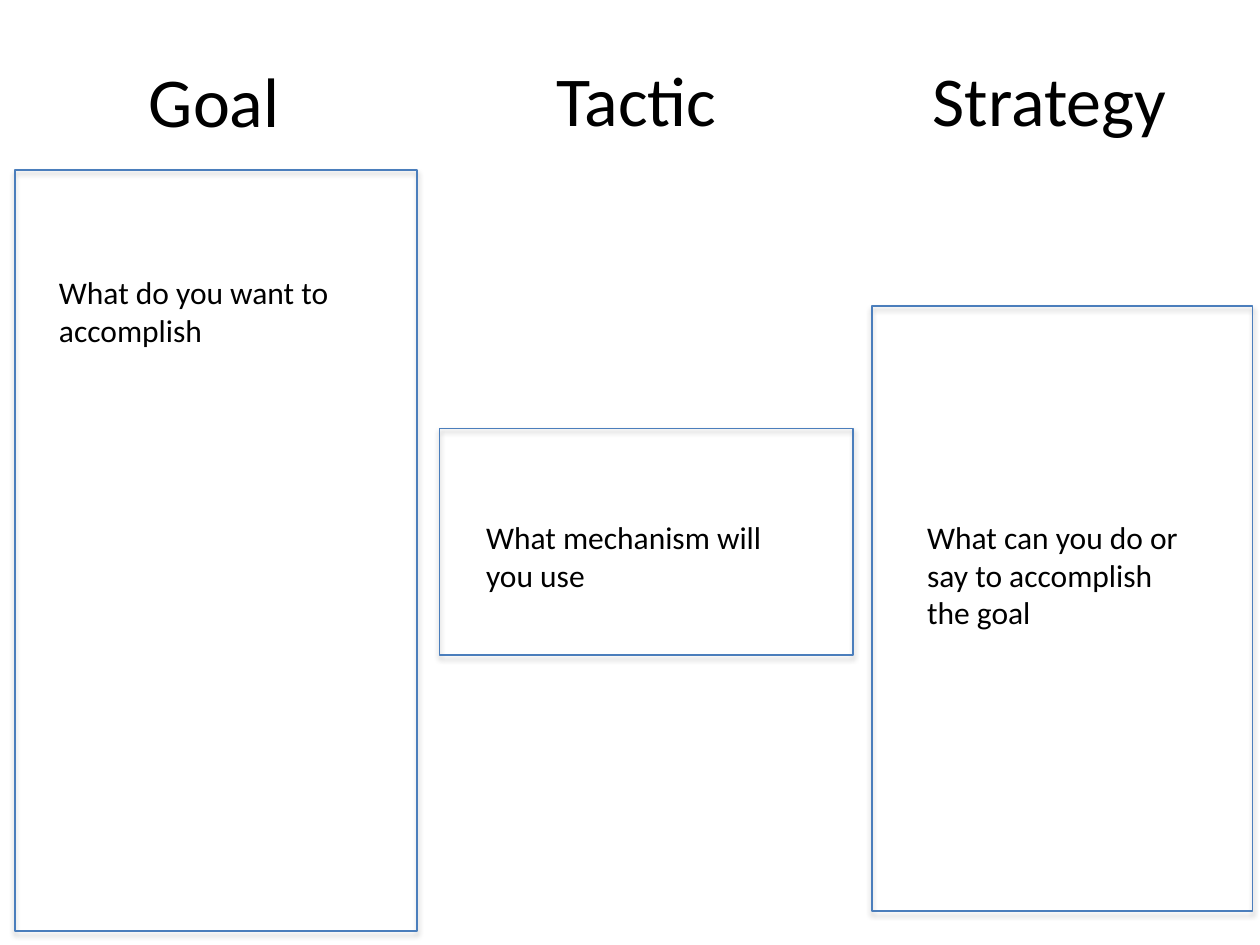
from dataclasses import dataclass

from lxml import etree
from pptx import Presentation
from pptx import util as u
from pptx.dml.color import RGBColor
from pptx.enum import shapes, text
from pptx.oxml import ns

PX = 9144  # EMU per px, at 100 px to the inch


@dataclass(frozen=True)
class Theme:
    font: str = "Calibri"
    ink: RGBColor = RGBColor(0, 0, 0)
    edge: RGBColor = RGBColor(0x4B, 0x7E, 0xBC)
    head: int = 40
    body: int = 18


@dataclass(frozen=True)
class Area:
    left: int
    top: int
    width: int
    height: int

    def emu(self) -> list[int]:
        return [n * PX for n in (self.left, self.top, self.width, self.height)]


@dataclass(frozen=True)
class Column:
    name: str
    head: Area
    frame: Area
    prompt: str
    note: Area


THEME = Theme()
COLUMNS = [
    Column("Goal", Area(20, 41, 300, 77), Area(12, 135, 319, 604),
           "What do you want to accomplish", Area(37, 212, 244, 71)),
    Column("Tactic", Area(355, 40, 300, 77), Area(349, 340, 328, 180),
           "What mechanism will you use", Area(376, 406, 279, 71)),
    Column("Strategy", Area(683, 40, 300, 77), Area(692, 243, 302, 480),
           "What can you do or say to accomplish the goal",
           Area(726, 406, 226, 101)),
]


def add_text(slide, words: str, area: Area, size: int, align) -> None:
    frame = slide.shapes.add_textbox(*area.emu()).text_frame
    frame.word_wrap = True
    frame.auto_size = text.MSO_AUTO_SIZE.SHAPE_TO_FIT_TEXT
    frame.text = words
    line = frame.paragraphs[0]
    line.alignment = align
    font = line.runs[0].font
    font.name, font.size = THEME.font, u.Pt(size)
    font.color.rgb = THEME.ink


def add_shadow(shape) -> None:
    """Give the shape a soft black shadow that falls straight down."""
    shape.shadow.inherit = False
    effects = shape._element.spPr.find(ns.qn("a:effectLst"))
    outer = etree.SubElement(effects, ns.qn("a:outerShdw"), blurRad="40000",
                             dist="23000", dir="5400000", rotWithShape="0")
    black = etree.SubElement(outer, ns.qn("a:srgbClr"), val="000000")
    etree.SubElement(black, ns.qn("a:alpha"), val="35000")


def add_frame(slide, area: Area) -> None:
    box = slide.shapes.add_shape(shapes.MSO_SHAPE.RECTANGLE, *area.emu())
    box.fill.background()
    box.line.color.rgb = THEME.edge
    box.line.width = u.Pt(0.75)
    add_shadow(box)


def add_column(slide, col: Column) -> None:
    add_text(slide, col.name, col.head, THEME.head, text.PP_ALIGN.CENTER)
    add_frame(slide, col.frame)
    add_text(slide, col.prompt, col.note, THEME.body, text.PP_ALIGN.LEFT)


def main() -> None:
    deck = Presentation()
    deck.slide_width, deck.slide_height = 1000 * PX, 750 * PX
    slide = deck.slides.add_slide(deck.slide_layouts.get_by_name("Blank"))
    for col in COLUMNS:
        add_column(slide, col)
    deck.save("out.pptx")


if __name__ == "__main__":
    main()
